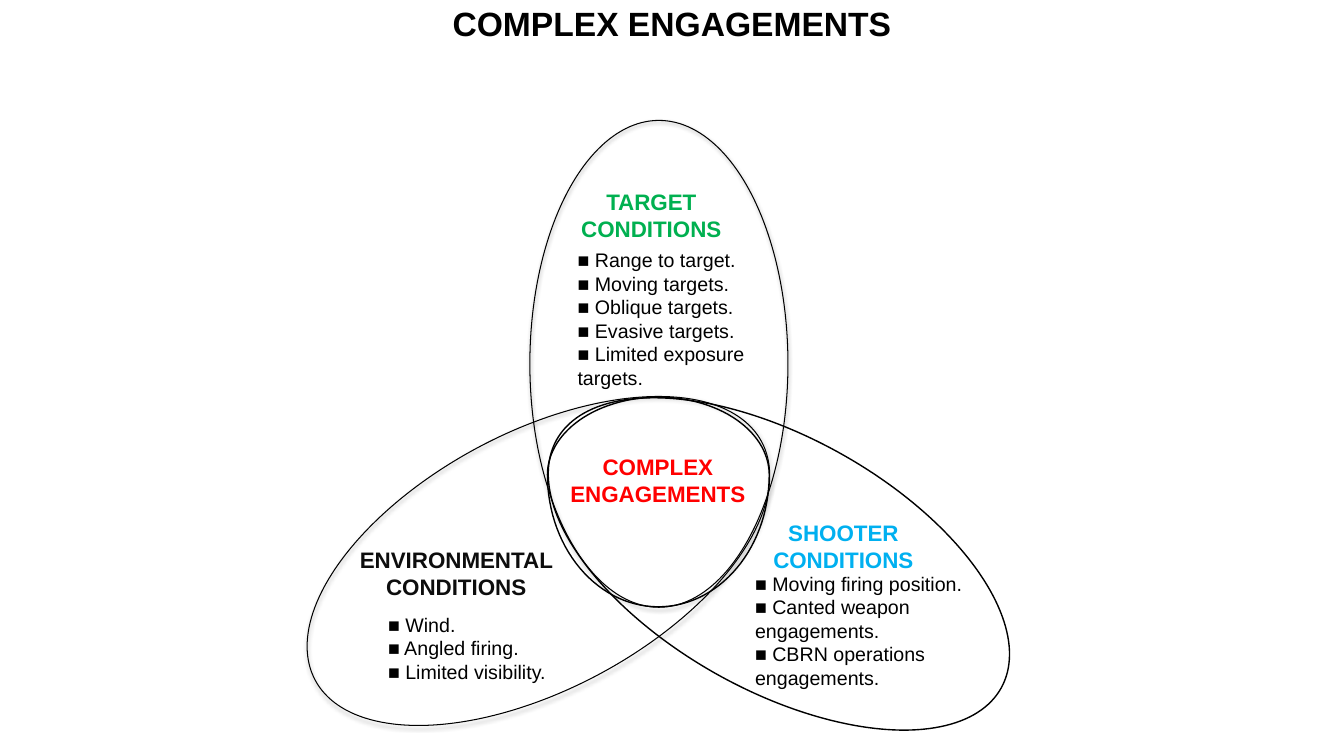
import math

import pptx
import pptx.dml.color
import pptx.enum.shapes
import pptx.enum.text
import pptx.oxml
import pptx.oxml.ns
import pptx.util

Inches = pptx.util.Inches
Pt = pptx.util.Pt

TITLE = ("COMPLEX ENGAGEMENTS", (0, 0.01, 13.33, 0.39))

# box (left, top, width, height), rotation, line width, shadow
ELLIPSES = [
    ((2.83, 4.29, 5.02, 2.55), 151.9, 0.75, True),
    ((4.12, 2.33, 4.83, 2.56), 90, 0.75, True),
    ((5.2, 4.34, 5.05, 2.51), 29.2, 1, False),
]

# centre x, centre y, half width, height above and below the centre
OVERLAP = (6.53, 4.71, 1.1, 0.77, 1.31)

LISTS = [
    ((3.75, 6.03, 2.78, 0.81),
     ["Wind.", "Angled firing.", "Limited visibility."]),
    ((7.39, 5.62, 2.96, 1.28),
     ["Moving firing position.", "Canted weapon engagements.",
      "CBRN operations engagements."]),
    ((5.63, 2.41, 2.48, 1.51),
     ["Range to target.", "Moving targets.", "Oblique targets.",
      "Evasive targets.", "Limited exposure targets."]),
]

HEADINGS = [
    ("COMPLEX ENGAGEMENTS", (5.55, 4.45, 1.95, 0.64), "FF0000"),
    ("TARGET CONDITIONS", (5.2, 1.82, 2.52, 0.7), "00B050"),
    ("ENVIRONMENTAL CONDITIONS", (2.8, 5.37, 3.45, 0.7), "0D0D0D"),
    ("SHOOTER CONDITIONS", (7.34, 5.1, 2.05, 0.7), "00B0F0"),
]


def rgb(value):
    return pptx.dml.color.RGBColor.from_string(value)


def add_text(page, area, lines, size, color="000000", heading=False):
    box = page.shapes.add_textbox(*map(Inches, area))
    frame = box.text_frame
    frame.word_wrap = True
    frame.text = "\n".join(lines)
    for para in frame.paragraphs:
        if heading:
            para.alignment = pptx.enum.text.PP_ALIGN.CENTER
        for span in para.runs:
            span.font.name = "Arial"
            span.font.size = Pt(size)
            span.font.bold = heading
            span.font.color.rgb = rgb(color)
    return frame


def outline(shape, width):
    shape.shadow.inherit = False
    shape.fill.background()
    shape.line.color.rgb = rgb("000000")
    shape.line.width = Pt(width)


def add_shadow(shape):
    effects = shape._element.spPr.find(pptx.oxml.ns.qn("a:effectLst"))
    effects.append(pptx.oxml.parse_xml(
        f'<a:outerShdw {pptx.oxml.ns.nsdecls("a")} blurRad="{Pt(3.1)}" '
        f'dist="{Pt(1.6)}" dir="5400000" rotWithShape="0">'
        '<a:srgbClr val="000000"><a:alpha val="38000"/></a:srgbClr>'
        '</a:outerShdw>'))


def add_overlap(page):
    """Draw the centre region as two half ellipses of different height."""
    x, y, half_width, above, below = OVERLAP
    points = []
    for degrees in range(0, 360, 3):
        angle = math.radians(degrees)
        height = below if degrees < 180 else above
        points.append((Inches(x + half_width * math.cos(angle)),
                       Inches(y + height * math.sin(angle))))
    builder = page.shapes.build_freeform(*points[0])
    builder.add_line_segments(points[1:], close=True)
    outline(builder.convert_to_shape(), 1)


def main():
    deck = pptx.Presentation()
    deck.slide_width, deck.slide_height = Inches(13.33), Inches(7.5)
    page = deck.slides.add_slide(deck.slide_layouts[6])

    text, area = TITLE
    frame = add_text(page, area, [text], 24, heading=True)
    frame.margin_left = frame.margin_right = 0
    frame.margin_top = frame.margin_bottom = 0
    frame.paragraphs[0].line_spacing = 1.04

    for area, rotation, width, shadow in ELLIPSES:
        ellipse = page.shapes.add_shape(
            pptx.enum.shapes.MSO_SHAPE.OVAL, *map(Inches, area))
        ellipse.rotation = rotation
        outline(ellipse, width)
        if shadow:
            add_shadow(ellipse)
    add_overlap(page)

    for area, items in LISTS:
        add_text(page, area, [f"■ {item}" for item in items], 14)
    for text, area, color in HEADINGS:
        add_text(page, area, [text], 16, color, heading=True)

    deck.save("out.pptx")


if __name__ == "__main__":
    main()
